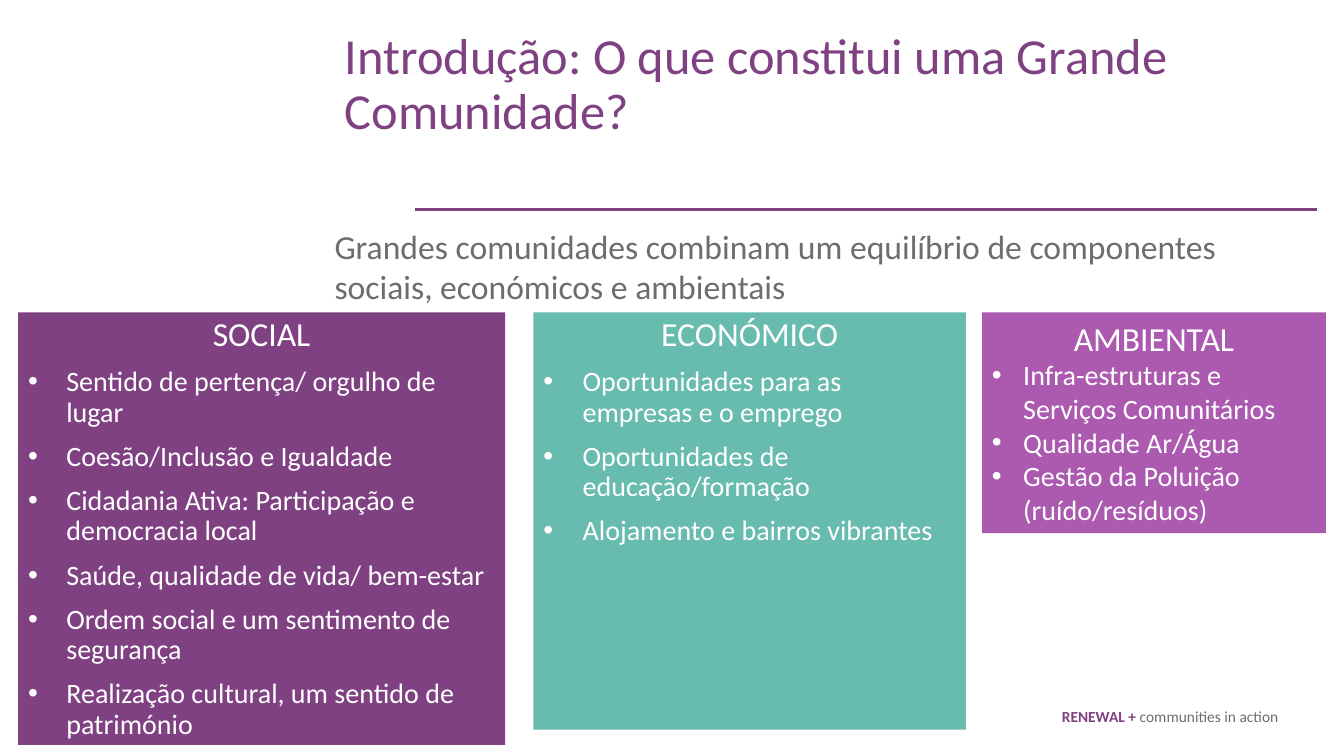
from lxml import etree
from pptx import Presentation
from pptx.dml.color import RGBColor
from pptx.enum.shapes import MSO_CONNECTOR, MSO_SHAPE
from pptx.enum.text import MSO_ANCHOR, MSO_AUTO_SIZE, PP_ALIGN
from pptx.oxml.ns import qn
from pptx.util import Inches, Pt

LEFT, CENTER, RIGHT = PP_ALIGN.LEFT, PP_ALIGN.CENTER, PP_ALIGN.RIGHT
TOP, NO_FIT = MSO_ANCHOR.TOP, MSO_AUTO_SIZE.NONE
RECT, STRAIGHT = MSO_SHAPE.RECTANGLE, MSO_CONNECTOR.STRAIGHT
PURPLE, TEAL, VIOLET = "7F4182", "68BBAF", "AB5AB0"
GRAY, WHITE = "6D6E6C", "FFFFFF"
CARD_TOP = 3.1

# left, width, height, fill, indent, line spacing, space before, heading, items
CARDS = [
    (0.18, 4.83, 4.29, PURPLE, 0.38, 0.9, 10, "SOCIAL", [
        "Sentido de pertença/ orgulho de lugar",
        "Coesão/Inclusão e Igualdade",
        "Cidadania Ativa: Participação e democracia local",
        "Saúde, qualidade de vida/ bem-estar",
        "Ordem social e um sentimento de segurança",
        "Realização cultural, um sentido de património"]),
    (5.29, 4.29, 4.14, TEAL, 0.39, 0.9, 10, "ECONÓMICO", [
        "Oportunidades para as empresas e o emprego",
        "Oportunidades de educação/formação",
        "Alojamento e bairros vibrantes"]),
    (9.74, 3.41, 2.19, VIOLET, 0.31, 1.0, 0, "AMBIENTAL", [
        "Infra-estruturas e Serviços Comunitários",
        "Qualidade Ar/Água",
        "Gestão da Poluição (ruído/resíduos)"]),
]


def color(value):
    return RGBColor.from_string(value)


def style(font, size, tone, bold=False):
    font.name, font.size, font.bold = "Calibri", Pt(size), bold
    font.color.rgb = color(tone)


def setup(shape):
    frame = shape.text_frame
    frame.word_wrap = True
    frame.auto_size = NO_FIT
    frame.vertical_anchor = TOP
    return frame


def write(para, text, size, tone, align=LEFT, line=1.0):
    para.text = text
    para.alignment = align
    para.line_spacing = line
    para.space_before = Pt(0)
    style(para.font, size, tone)


def bullet(para, indent):
    props = para._p.get_or_add_pPr()
    props.set("marL", str(Inches(indent)))
    props.set("indent", str(-Inches(indent)))
    etree.SubElement(props, qn("a:buFont")).set("typeface", "Arial")
    etree.SubElement(props, qn("a:buChar")).set("char", "•")


def add_box(slide, *area):
    return setup(slide.shapes.add_textbox(*map(Inches, area)))


def add_title(slide, text):
    title = slide.shapes.title
    title.left, title.top = Inches(3.32), Inches(0.26)
    title.width, title.height = Inches(10.27), Inches(1.51)
    write(setup(title).paragraphs[0], text, 36, PURPLE, line=0.9)


def add_rule(slide):
    y = Inches(2.08)
    rule = slide.shapes.add_connector(STRAIGHT, Inches(4.12), y, Inches(13.06), y)
    rule.line.color.rgb = color(PURPLE)
    rule.line.width = Pt(2.25)
    etree.SubElement(rule._element.spPr, qn("a:effectLst"))


def add_card(slide, left, width, height, fill, indent, line, gap, head, items):
    area = map(Inches, (left, CARD_TOP, width, height))
    card = slide.shapes.add_shape(RECT, *area)
    card.shadow.inherit = False
    card.fill.solid()
    card.fill.fore_color.rgb = color(fill)
    card.line.fill.background()
    frame = setup(card)
    write(frame.paragraphs[0], head, 24, WHITE, CENTER, line)
    for item in items:
        para = frame.add_paragraph()
        bullet(para, indent)
        write(para, item, 20, WHITE, line=line)
        para.space_before = Pt(gap)


def add_footer(slide):
    para = add_box(slide, 0.31, 6.97, 12.47, 0.45).paragraphs[0]
    para.alignment = RIGHT
    for text, tone, bold in [("RENEWAL + ", PURPLE, True),
                             ("communities in action", GRAY, False)]:
        run = para.add_run()
        run.text = text
        style(run.font, 11, tone, bold)


def main():
    deck = Presentation()
    deck.slide_width, deck.slide_height = Inches(13.33), Inches(7.5)
    slide = deck.slides.add_slide(deck.slide_layouts[5])

    # Header
    add_title(slide, "Introdução: O que constitui uma Grande Comunidade?")
    add_rule(slide)
    intro = add_box(slide, 3.22, 2.19, 9.53, 0.91)
    write(intro.paragraphs[0], "Grandes comunidades combinam um equilíbrio de "
          "componentes sociais, económicos e ambientais", 24, GRAY)

    # Three components
    for card in CARDS:
        add_card(slide, *card)

    # Footer
    add_footer(slide)
    deck.save("out.pptx")


if __name__ == "__main__":
    main()
